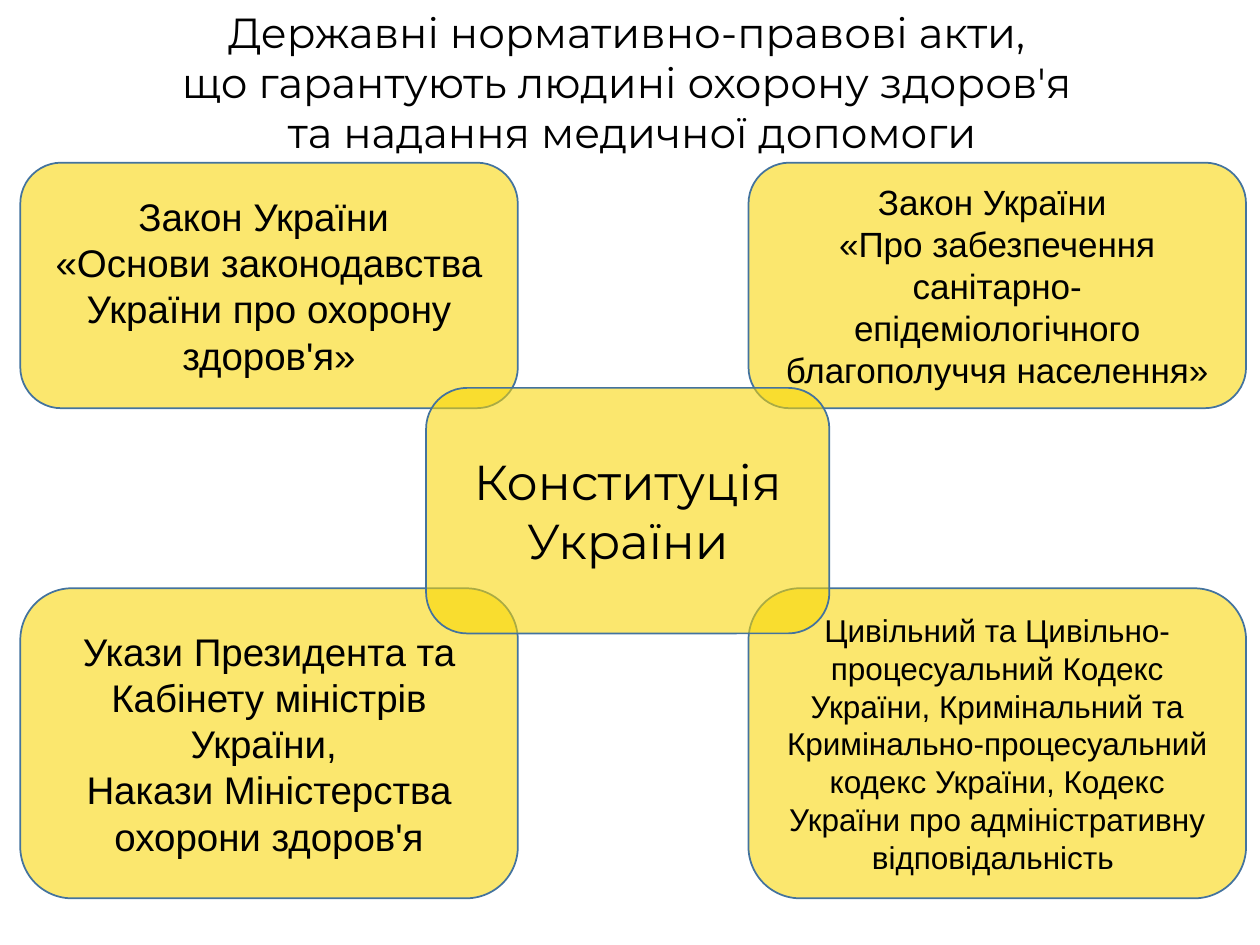
import pptx
import pptx.dml.color
import pptx.enum.shapes
import pptx.enum.text
import pptx.util
from lxml import etree
from pptx.oxml.ns import qn

Cm = pptx.util.Cm
Pt = pptx.util.Pt


def color(hex_value):
    return pptx.dml.color.RGBColor.from_string(hex_value)


def write_text(frame, lines, font_name, size):
    font_format = {"name": font_name, "size": Pt(size)}
    for index, line in enumerate(lines):
        para = frame.paragraphs[0] if index == 0 else frame.add_paragraph()
        para.alignment = pptx.enum.text.PP_ALIGN.CENTER
        span = para.add_run()
        span.text = line
        for key, value in font_format.items():
            setattr(span.font, key, value)
        span.font.color.rgb = color("000000")


deck = pptx.Presentation()
deck.slide_width, deck.slide_height = Cm(25.4), Cm(19.05)
slide = deck.slides.add_slide(deck.slide_layouts[6])

# Title
title = slide.shapes.add_textbox(Cm(2.51), Cm(0), Cm(20.47), Cm(3.33))
title_format = {"word_wrap": False,
                "auto_size": pptx.enum.text.MSO_AUTO_SIZE.SHAPE_TO_FIT_TEXT}
for key, value in title_format.items():
    setattr(title.text_frame, key, value)
write_text(title.text_frame, [
    "Державні нормативно-правові акти, ",
    "що гарантують людині охорону здоров'я ",
    "та надання медичної допомоги",
], "Montserrat", 24)

# Four groups of acts, then the constitution on top in the centre
left, right = 0.41, 15.09
upper, lower = 3.28, 11.86
side_width, low_height, high_height = 10.03, 4.95, 6.25
acts = [
    (left, upper, side_width, low_height, "Arial", 22,
     ["Закон України ", "«Основи законодавства України про охорону здоров'я»"]),
    (left, lower, side_width, high_height, "Arial", 22,
     ["Укази Президента та Кабінету міністрів України, ",
      "Накази Міністерства охорони здоров'я"]),
    (right, upper, side_width, low_height, "Arial", 20,
     ["Закон України ",
      "«Про забезпечення санітарно-епідеміологічного благополуччя населення»"]),
    (right, lower, side_width, high_height, "Arial", 18,
     ["Цивільний та Цивільно-процесуальний Кодекс України, Кримінальний та "
      "Кримінально-процесуальний кодекс України, Кодекс України про "
      "адміністративну відповідальність "]),
    (8.59, 7.82, 8.13, low_height, "Montserrat", 28, ["Конституція України"]),
]
box_format = {"word_wrap": True,
              "vertical_anchor": pptx.enum.text.MSO_ANCHOR.MIDDLE}
for x, y, width, height, font_name, size, lines in acts:
    box = slide.shapes.add_shape(
        pptx.enum.shapes.MSO_SHAPE.ROUNDED_RECTANGLE,
        Cm(x), Cm(y), Cm(width), Cm(height))
    box.shadow.inherit = False
    box.fill.solid()
    box.fill.fore_color.rgb = color("F9D600")
    # Translucent fill
    fill_color = box.fill._xPr.find(qn("a:solidFill"))[0]
    etree.SubElement(fill_color, qn("a:alpha")).set("val", "57000")
    box.line.color.rgb = color("43739E")
    box.line.width = Pt(1)
    for key, value in box_format.items():
        setattr(box.text_frame, key, value)
    write_text(box.text_frame, lines, font_name, size)

deck.save("out.pptx")
